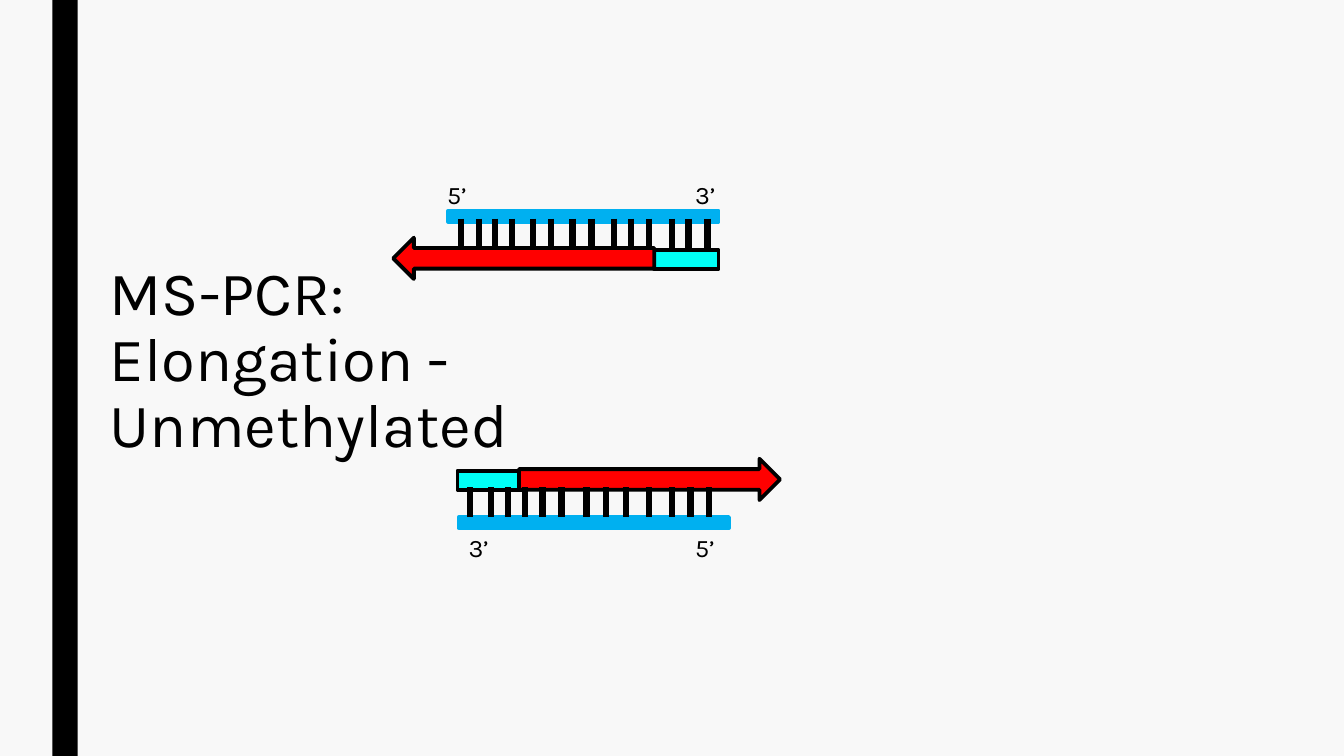
import pptx
import pptx.util
import pptx.dml.color
import pptx.enum.shapes
import pptx.enum.text
from lxml import etree

Cm = pptx.util.Cm
Pt = pptx.util.Pt
SHAPES = pptx.enum.shapes.MSO_SHAPE
FONT = "Karla"
BLACK = "000000"
BLUE = "00B0F0"
CYAN = "00FFF6"
RED = "FF0000"
STRAND_WIDTH, STRAND_HEIGHT = 6.81, 0.28

UPPER = {
    "primer": (5.18, 0.99),
    "arrow": (-1.39, 0.68),
    "rotation": 0,
    "bond_top": 0.2,
    "bonds": (0.31, 0.77, 1.17, 1.6, 2.14, 2.59, 3.13, 3.61, 4.17, 4.6, 5.06, 5.64, 6.05, 6.53),
    "label_top": -0.92,
    "labels": (("5’", -0.28), ("3’", 5.97)),
}
LOWER = {
    "primer": (-0.03, -1.17),
    "arrow": (1.52, -1.47),
    "rotation": 180,
    "bond_top": -0.75,
    "bonds": (0.28, 0.81, 1.24, 1.67, 2.11, 2.59, 3.22, 3.71, 4.21, 4.8, 5.38, 5.84, 6.3),
    "label_top": 0.25,
    "labels": (("3’", 0), ("5’", 5.71)),
}


def paint(color_format, color):
    color_format.rgb = pptx.dml.color.RGBColor.from_string(color)


def add_block(page, kind, box, fill, outline=None):
    block = page.shapes.add_shape(kind, *map(Cm, box))
    block.shadow.inherit = False
    block.fill.solid()
    paint(block.fill.fore_color, fill)
    if outline:
        paint(block.line.color, outline)
        block.line.width = Pt(2.75)
    else:
        block.line.fill.background()
    return block


def add_bond(page, x, top, height):
    bond = page.shapes.add_connector(
        pptx.enum.shapes.MSO_CONNECTOR.STRAIGHT, Cm(x), Cm(top), Cm(x), Cm(top + height)
    )
    paint(bond.line.color, BLACK)
    bond.line.width = Pt(4.5)
    properties = bond.element.spPr
    etree.SubElement(properties, pptx.oxml.ns.qn("a:effectLst"))


def write(frame, text, size):
    frame.word_wrap = True
    frame.text = text
    para = frame.paragraphs[0]
    para.alignment = pptx.enum.text.PP_ALIGN.LEFT
    para.font.name = FONT
    para.font.size = Pt(size)
    paint(para.font.color, BLACK)
    return para


def add_title(page, box, text):
    title = page.shapes.title
    title.left, title.top, title.width, title.height = map(Cm, box)
    frame = title.text_frame
    frame.auto_size = pptx.enum.text.MSO_AUTO_SIZE.NONE
    frame.vertical_anchor = pptx.enum.text.MSO_ANCHOR.TOP
    write(frame, text, 44).line_spacing = 0.89


def add_duplex(page, left, top, layout):
    strand = (left, top, STRAND_WIDTH, STRAND_HEIGHT)
    add_block(page, SHAPES.RECTANGLE, strand, BLUE, BLUE)
    for text, offset in layout["labels"]:
        label = page.shapes.add_textbox(
            Cm(left + offset), Cm(top + layout["label_top"]), Cm(1.09), Cm(1.02)
        )
        write(label.text_frame, text, 18)
    x, y = layout["primer"]
    add_block(page, SHAPES.RECTANGLE, (left + x, top + y, 1.63, 0.48), CYAN, BLACK)
    x, y = layout["arrow"]
    arrow = add_block(page, SHAPES.LEFT_ARROW, (left + x, top + y, 6.58, 1.04), RED, BLACK)
    arrow.rotation = layout["rotation"]
    for offset in layout["bonds"]:
        add_bond(page, left + offset, top + layout["bond_top"], 0.74)


def main():
    deck = pptx.Presentation()
    deck.slide_width, deck.slide_height = Cm(33.87), Cm(19.05)
    page = deck.slides.add_slide(deck.slide_layouts.get_by_name("Title Only"))
    page.background.fill.solid()
    paint(page.background.fill.fore_color, "F8F8F8")
    add_block(page, SHAPES.RECTANGLE, (1.32, 0, 0.64, 19.05), BLACK)
    add_title(page, (2.51, 6.5, 12.24, 2.26), "MS-PCR: Elongation - Unmethylated")
    add_duplex(page, 11.3, 5.31, UPPER)
    add_duplex(page, 11.56, 13.03, LOWER)
    deck.save("out.pptx")


if __name__ == "__main__":
    main()
